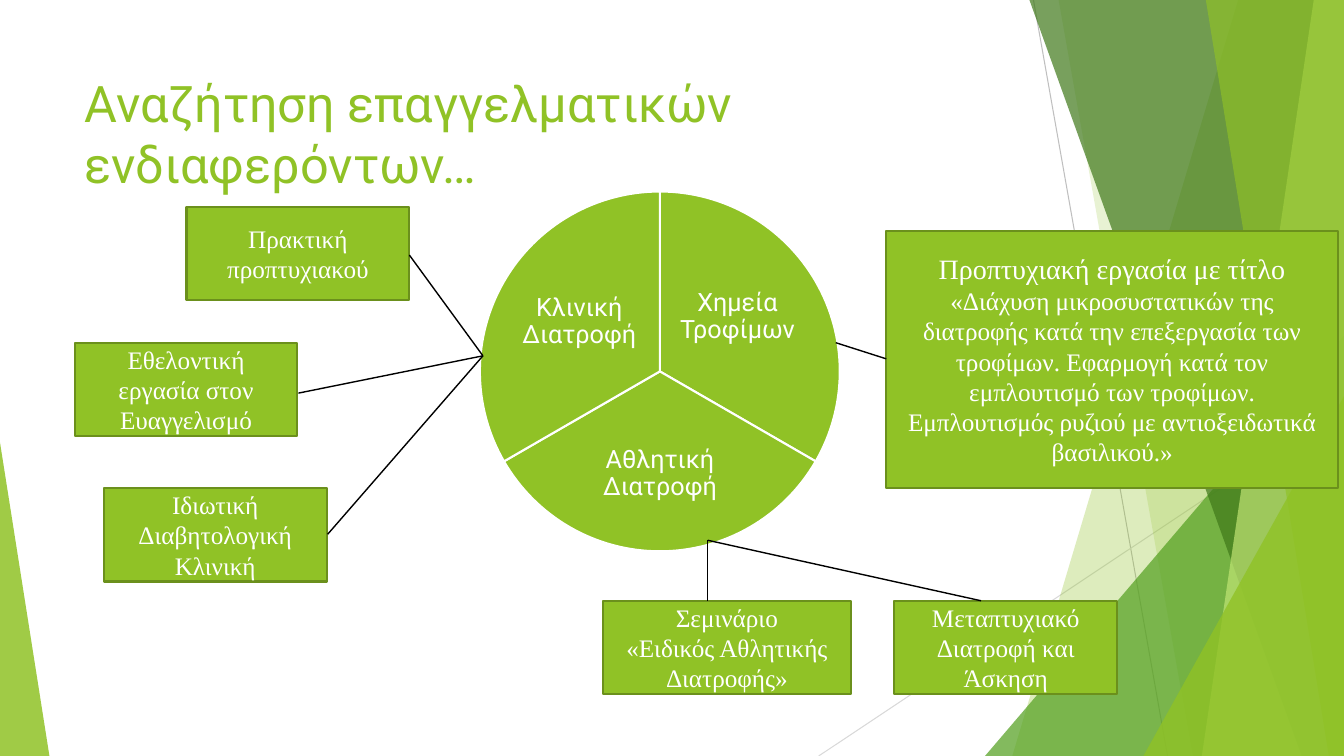
from lxml import etree
from pptx import Presentation
from pptx.dml.color import RGBColor
from pptx.enum.shapes import MSO_CONNECTOR, MSO_SHAPE
from pptx.enum.text import MSO_ANCHOR, PP_ALIGN
from pptx.oxml.ns import qn
from pptx.util import Inches, Pt

GREEN = RGBColor(0x90, 0xC2, 0x26)
GRASS = RGBColor(0x54, 0xA0, 0x21)
FOREST = RGBColor(0x3F, 0x78, 0x19)
LIME = RGBColor(0xC0, 0xE4, 0x74)
OLIVE = RGBColor(0x6B, 0x90, 0x1C)
GRAY = RGBColor(0xBF, 0xBF, 0xBF)
PALE_GRAY = RGBColor(0xD9, 0xD9, 0xD9)
WHITE = RGBColor(0xFF, 0xFF, 0xFF)
BLACK = RGBColor(0x00, 0x00, 0x00)

deck = Presentation()
deck.slide_width, deck.slide_height = Inches(13.33), Inches(7.5)
page = deck.slides.add_slide(deck.slide_layouts[6])
shapes = page.shapes


def add_line(start, end, color, width):
    line = shapes.add_connector(MSO_CONNECTOR.STRAIGHT, *map(Inches, start + end))
    line.line.color.rgb = color
    line.line.width = Pt(width)
    etree.SubElement(line._element.spPr, qn("a:effectLst"))


def paint(shape, color, opacity=100, border=None):
    shape.shadow.inherit = False
    shape.fill.solid()
    shape.fill.fore_color.rgb = color
    if opacity < 100:
        tint = shape._element.spPr.find(qn("a:solidFill"))[0]
        etree.SubElement(tint, qn("a:alpha"), val=str(opacity * 1000))
    if border is None:
        shape.line.fill.background()
    else:
        shape.line.color.rgb = border
        shape.line.width = Pt(1.5)


# Background facets, back to front: bands give top left and bottom left x,
# triangles give left, top, width, height and apex position
add_line((10.25, 0), (11.58, 7.5), GRAY, 0.75)
add_line((13.33, 4.03), (8.12, 7.5), PALE_GRAY, 0.75)
facets = [
    ((12.28, 10.04), GREEN, 30),
    ((10.5, 11.83), GREEN, 20),
    ((9.77, 3.33, 3.56, 4.17, 1), GRASS, 72),
    ((10.21, 12.91), FOREST, 70),
    ((13.03, 11.92), LIME, 70),
    ((11.96, 13.18), GREEN, 65),
    ((11.34, 3.93, 1.99, 3.57, 1), GREEN, 80),
    ((0, 4.39, 0.49, 3.11, 0), GREEN, 85),
]
for outline, color, opacity in facets:
    if len(outline) == 2:
        top_x, bottom_x = outline
        builder = shapes.build_freeform(Inches(top_x), 0)
        corners = [(13.33, 0), (13.33, 7.5), (bottom_x, 7.5)]
        builder.add_line_segments([(Inches(x), Inches(y)) for x, y in corners])
        facet = builder.convert_to_shape()
    else:
        *place, apex = outline
        facet = shapes.add_shape(MSO_SHAPE.ISOSCELES_TRIANGLE, *map(Inches, place))
        facet.adjustments[0] = apex
    paint(facet, color, opacity)

# Title
title = shapes.add_textbox(Inches(0.74), Inches(0.67), Inches(9.4), Inches(1.44))
title.text_frame.word_wrap = True
para = title.text_frame.paragraphs[0]
para.text = "Αναζήτηση επαγγελματικών ενδιαφερόντων…"
para.font.name = "Roboto"
para.font.size = Pt(36)
para.font.color.rgb = GREEN

# Circle of three fields: start and end angle, label and its place
sectors = [
    (162, 18, "Χημεία Τροφίμων", (6.71, 2.55, 1.21, 1.19)),
    (18, 90, "Αθλητική Διατροφή", (5.74, 4.15, 1.61, 1.1)),
    (90, 162, "Κλινική Διατροφή", (5.14, 2.6, 1.21, 1.19)),
]
for start, end, field, place in sectors:
    sector = shapes.add_shape(MSO_SHAPE.PIE, Inches(4.76), Inches(1.9), Inches(3.57), Inches(3.57))
    sector.adjustments[0] = start
    sector.adjustments[1] = end
    paint(sector, GREEN, border=WHITE)
    frame = shapes.add_textbox(*map(Inches, place)).text_frame
    frame.word_wrap = True
    frame.vertical_anchor = MSO_ANCHOR.MIDDLE
    frame.margin_left = frame.margin_right = Inches(0.03)
    frame.margin_top = frame.margin_bottom = Inches(0.03)
    para = frame.paragraphs[0]
    para.text = field
    para.alignment = PP_ALIGN.CENTER
    para.line_spacing = 0.9
    para.font.name = "Roboto"
    para.font.size = Pt(18)
    para.font.color.rgb = WHITE

# Activity boxes: place, then paragraphs with their sizes
activities = [
    ((1.85, 2.05, 2.21, 0.93), [("Πρακτική προπτυχιακού", 18)]),
    ((8.79, 2.29, 4.48, 2.55), [
        ("Προπτυχιακή εργασία με τίτλο", 20),
        ("«Διάχυση μικροσυστατικών της διατροφής κατά την επεξεργασία των "
         "τροφίμων. Εφαρμογή κατά τον εμπλουτισμό των τροφίμων. "
         "Εμπλουτισμός ρυζιού με αντιοξειδωτικά βασιλικού.»", 18),
    ]),
    ((0.74, 3.4, 2.21, 0.93), [("Εθελοντική εργασία στον Ευαγγελισμό", 18)]),
    ((1.03, 4.84, 2.21, 0.93), [("Ιδιωτική Διαβητολογική Κλινική", 18)]),
    ((5.98, 5.96, 2.46, 0.93), [("Σεμινάριο", 18), ("«Ειδικός Αθλητικής Διατροφής»", 18)]),
    ((8.87, 5.96, 2.21, 0.93), [("Μεταπτυχιακό Διατροφή και Άσκηση", 18)]),
]
for place, texts in activities:
    box = shapes.add_shape(MSO_SHAPE.RECTANGLE, *map(Inches, place))
    paint(box, GREEN, border=OLIVE)
    frame = box.text_frame
    frame.word_wrap = True
    frame.vertical_anchor = MSO_ANCHOR.MIDDLE
    for index, (text, size) in enumerate(texts):
        para = frame.add_paragraph() if index else frame.paragraphs[0]
        para.text = text
        para.alignment = PP_ALIGN.CENTER
        para.font.name = "Times New Roman"
        para.font.size = Pt(size)
        para.font.color.rgb = WHITE

# Lines from each field to its activities
links = [
    ((4.79, 3.53), [(4.06, 2.53), (2.96, 3.9), (3.25, 5.3)]),
    ((8.29, 3.4), [(8.79, 3.56)]),
    ((7.02, 5.36), [(9.73, 5.96), (7.02, 5.96)]),
]
for hub, ends in links:
    for end in ends:
        add_line(end, hub, BLACK, 1)

deck.save("out.pptx")
